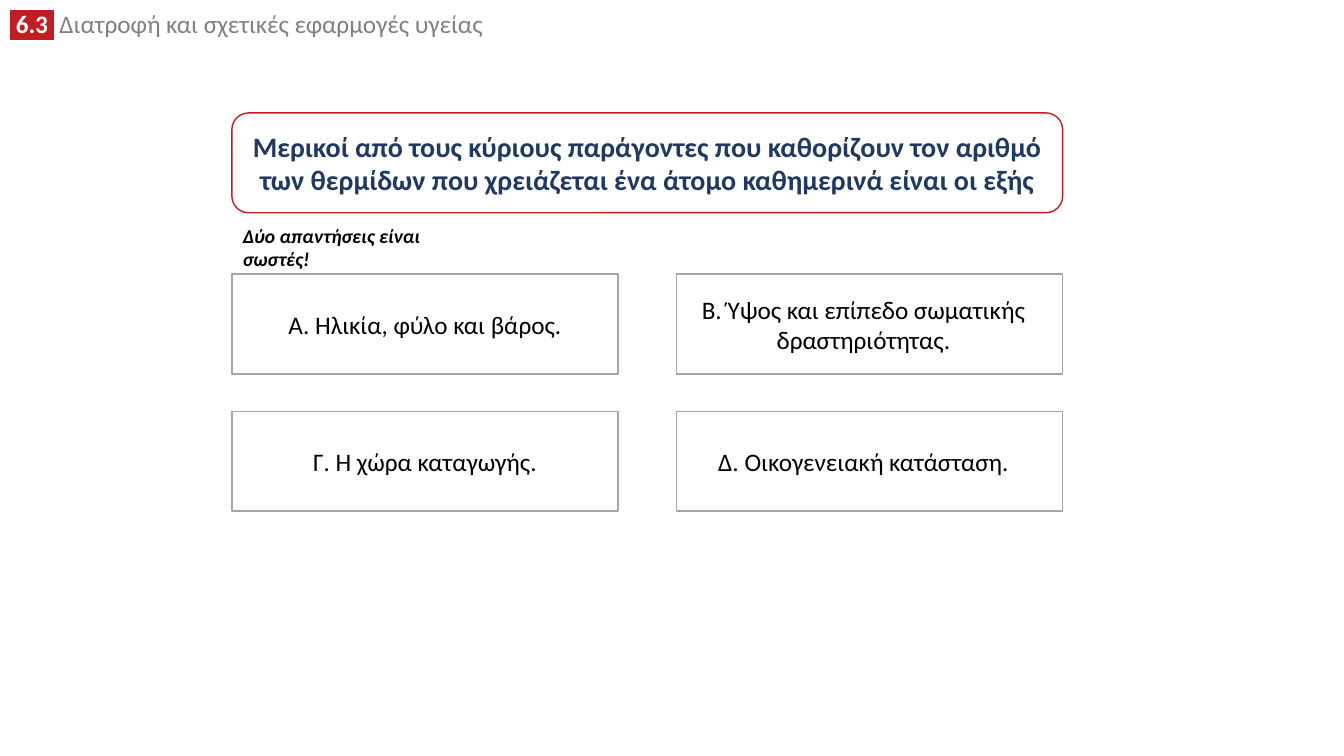
from dataclasses import dataclass

from lxml.etree import SubElement
from pptx import Presentation
from pptx.dml.color import RGBColor as RGB
from pptx.enum.shapes import MSO_SHAPE as SHAPE
from pptx.enum.text import MSO_ANCHOR as ANCHOR, MSO_AUTO_SIZE as AUTO, PP_ALIGN as ALIGN
from pptx.oxml.ns import qn
from pptx.util import Inches, Pt


@dataclass(frozen=True)
class Theme:
    """Colours, font and type sizes of the quiz slide."""
    font: str = "Calibri"
    red: str = "C01E24"
    navy: str = "203864"
    grey: str = "808080"
    border: str = "A5A5A5"
    black: str = "000000"
    white: str = "FFFFFF"
    question: int = 20
    body: int = 18
    hint: int = 14


THEME = Theme()


def add_text(p, text, size=THEME.body, color=THEME.black, bold=False, italic=False, highlight=None):
    """Append a formatted run to a paragraph."""
    r = p.add_run()
    r.text = text
    font = r.font
    font.name, font.size, font.bold, font.italic = THEME.font, Pt(size), bold, italic
    font.color.rgb = RGB.from_string(color)
    if highlight:
        rPr = font._element
        mark = SubElement(rPr, qn("a:highlight"))
        SubElement(mark, qn("a:srgbClr"), val=highlight)
        rPr.find(qn("a:solidFill")).addnext(mark)


def add_header(slide, box, number, title):
    """Fill the title placeholder with a section number and its title."""
    sp = slide.shapes.title
    sp.left, sp.top, sp.width, sp.height = map(Inches, box)
    tf = sp.text_frame
    tf.auto_size = AUTO.NONE
    tf.vertical_anchor = ANCHOR.TOP
    p = tf.paragraphs[0]
    p.alignment, p.line_spacing = ALIGN.LEFT, 0.8
    add_text(p, f" {number} ", color=THEME.white, bold=True, highlight=THEME.red)
    add_text(p, f" {title}", color=THEME.grey)


def add_card(slide, box, text, shape=SHAPE.RECTANGLE, line=THEME.border, right_inset=0.1, **style):
    """Draw an outlined white box with centred text."""
    sp = slide.shapes.add_shape(shape, *map(Inches, box))
    sp.shadow.inherit = False
    sp.fill.solid()
    sp.fill.fore_color.rgb = RGB.from_string(THEME.white)
    sp.line.color.rgb = RGB.from_string(line)
    sp.line.width = Pt(1)
    tf = sp.text_frame
    tf.word_wrap = True
    tf.vertical_anchor = ANCHOR.MIDDLE
    tf.margin_right = Inches(right_inset)
    p = tf.paragraphs[0]
    p.alignment = ALIGN.CENTER
    add_text(p, text, **style)


def add_hint(slide, box, text):
    """Place the short note above the answers."""
    tf = slide.shapes.add_textbox(*map(Inches, box)).text_frame
    tf.word_wrap = True
    add_text(tf.paragraphs[0], text, size=THEME.hint, bold=True, italic=True)


def add_answers(slide, box, answers, gap_x=0.58, gap_y=0.37):
    """Lay the answers out in two columns inside the box."""
    left, top, width, height = box
    rows = len(answers) // 2
    w = (width - gap_x) / 2
    h = (height - gap_y * (rows - 1)) / rows
    for i, text in enumerate(answers):
        row, col = divmod(i, 2)
        cell = (left + col * (w + gap_x), top + row * (h + gap_y), w, h)
        add_card(slide, cell, text, right_inset=0.22 if col else 0.1)


def add_quiz(slide, box):
    """Stack question, hint and answers inside the box."""
    left, top, width, height = box
    add_card(slide, (left, top, width, 0.99),
             "Μερικοί από τους κύριους παράγοντες που καθορίζουν τον αριθμό "
             "των θερμίδων που χρειάζεται ένα άτομο καθημερινά είναι οι εξής",
             shape=SHAPE.ROUNDED_RECTANGLE, line=THEME.red,
             size=THEME.question, color=THEME.navy, bold=True)
    add_answers(slide, (left, top + 1.6, width, height - 1.6), [
        "A. Ηλικία, φύλο και βάρος.",
        "B. Ύψος και επίπεδο σωματικής δραστηριότητας.",
        "Γ. Η χώρα καταγωγής.",
        "Δ. Οικογενειακή κατάσταση.",
    ])
    add_hint(slide, (left + 0.01, top + 1.05, 2.24, 0.34), "Δύο απαντήσεις είναι σωστές!")


def main():
    """Build and save the slide."""
    prs = Presentation()
    prs.slide_width, prs.slide_height = Inches(13.33), Inches(7.5)
    slide = prs.slides.add_slide(prs.slide_layouts[5])
    add_header(slide, (0, 0.09, 9.52, 0.35), "6.3", "Διατροφή και σχετικές εφαρμογές υγείας")
    add_quiz(slide, (2.3, 1.12, 8.24, 3.95))
    prs.save("out.pptx")


if __name__ == "__main__":
    main()
